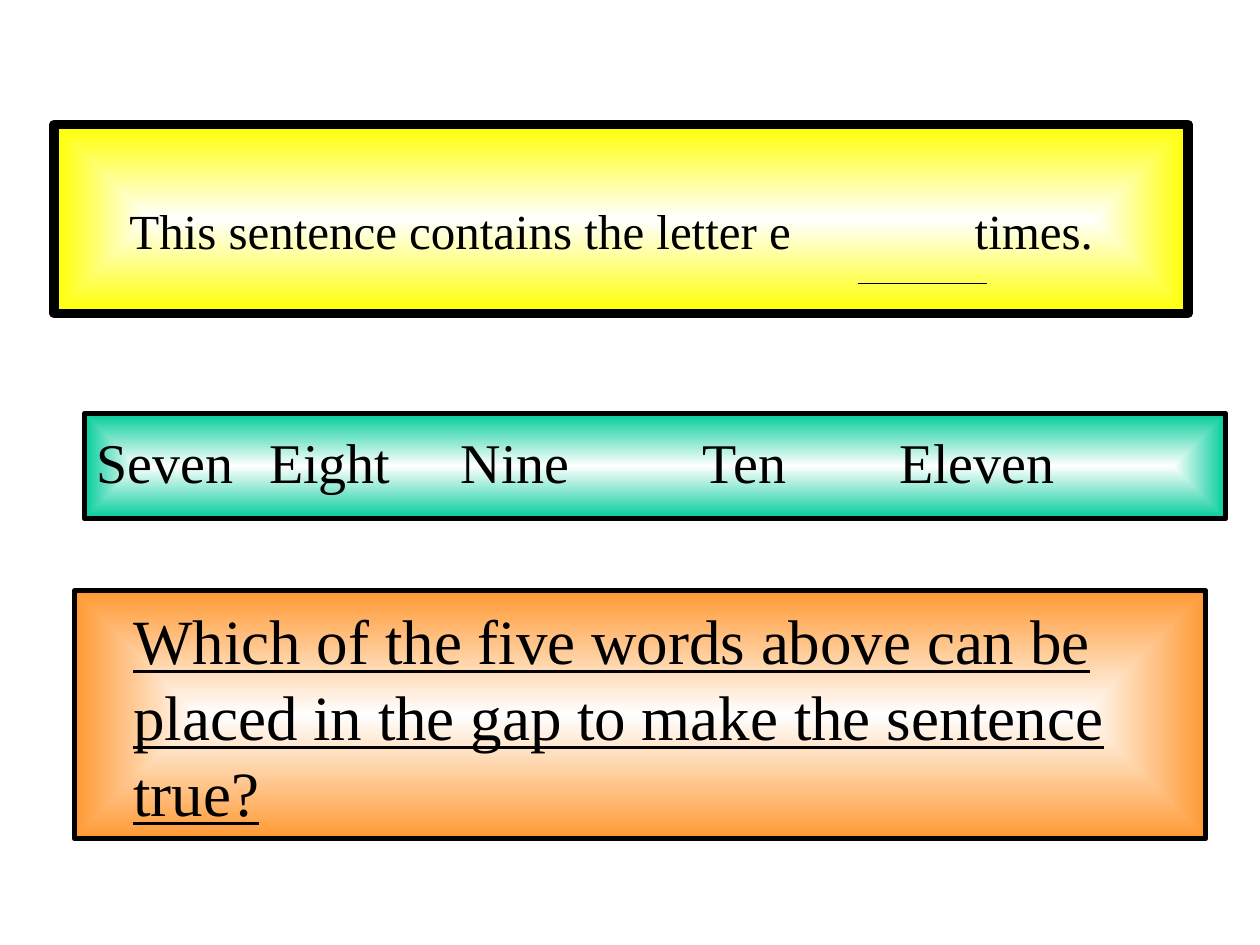
from lxml.etree import SubElement
from pptx import Presentation
from pptx.dml.color import RGBColor
from pptx.enum.shapes import MSO_CONNECTOR, MSO_SHAPE
from pptx.enum.text import MSO_ANCHOR, PP_ALIGN
from pptx.oxml.ns import qn
from pptx.util import Cm, Pt

COLORS = {
    "black": "000000",
    "white": "FFFFFF",
    "yellow": "FFFF00",
    "green": "00CC99",
    "orange": "FF9933",
}

presentation = Presentation()
presentation.slide_width = Cm(25.4)
presentation.slide_height = Cm(19.05)
slide = presentation.slides.add_slide(presentation.slide_layouts[6])


def add_text_box(text, *, box, color, size, border=2.75, inset=(0.25, 0.28), tabs=(),
                 tab_size=None, anchor=MSO_ANCHOR.TOP, underline=False, line_spacing=None):
    shape = slide.shapes.add_shape(MSO_SHAPE.RECTANGLE, *[Cm(length) for length in box])
    shape.shadow.inherit = False
    shape.line.color.rgb = RGBColor.from_string(COLORS["black"])
    shape.line.width = Pt(border)

    shape.fill.gradient()
    for stop, name in zip(shape.fill.gradient_stops, ("white", color)):
        stop.color.rgb = RGBColor.from_string(COLORS[name])
    gradient = shape._element.spPr.find(qn("a:gradFill"))
    gradient.remove(gradient.find(qn("a:lin")))
    center = SubElement(gradient, qn("a:path"), path="shape")
    SubElement(center, qn("a:fillToRect"), l="50000", t="50000", r="50000", b="50000")

    frame = shape.text_frame
    frame.word_wrap = True
    frame.vertical_anchor = anchor
    frame.margin_left, frame.margin_top = [Cm(length) for length in inset]
    paragraph = frame.paragraphs[0]
    paragraph.alignment = PP_ALIGN.LEFT
    paragraph.line_spacing = line_spacing
    if tabs:
        tab_list = SubElement(paragraph._p.get_or_add_pPr(), qn("a:tabLst"))
        for position in tabs:
            SubElement(tab_list, qn("a:tab"), pos=str(Cm(position)), algn="l")

    for part in text.replace("\t", "|\t|").split("|"):
        run = paragraph.add_run()
        run.text = part
        run.font.name = "Times New Roman"
        run.font.size = Pt(tab_size if part == "\t" and tab_size else size)
        run.font.underline = underline
        run.font.color.rgb = RGBColor.from_string(COLORS["black"])


add_text_box("This sentence contains the letter e\ttimes.", box=(1.09, 2.51, 22.86, 3.81),
             color="yellow", size=28, border=5.25, inset=(1.52, 0.13), tabs=[17.04],
             tab_size=44, anchor=MSO_ANCHOR.MIDDLE)

add_text_box("Seven\tEight\tNine\tTen\tEleven", box=(1.7, 8.33, 23.01, 2.13),
             color="green", size=32, tabs=[3.48, 7.34, 12.22, 16.18])

gap_line = slide.shapes.add_connector(
    MSO_CONNECTOR.STRAIGHT, Cm(17.3), Cm(5.72), Cm(19.89), Cm(5.72))
gap_line.line.color.rgb = RGBColor.from_string(COLORS["black"])
gap_line.line.width = Pt(0.75)
SubElement(gap_line._element.spPr, qn("a:effectLst"))

add_text_box("Which of the five words above can be placed in the gap to make the sentence true?",
             box=(1.5, 11.91, 22.81, 5), color="orange", size=36, inset=(1.19, 0.21),
             underline=True, line_spacing=Pt(43.4))

presentation.save("out.pptx")
